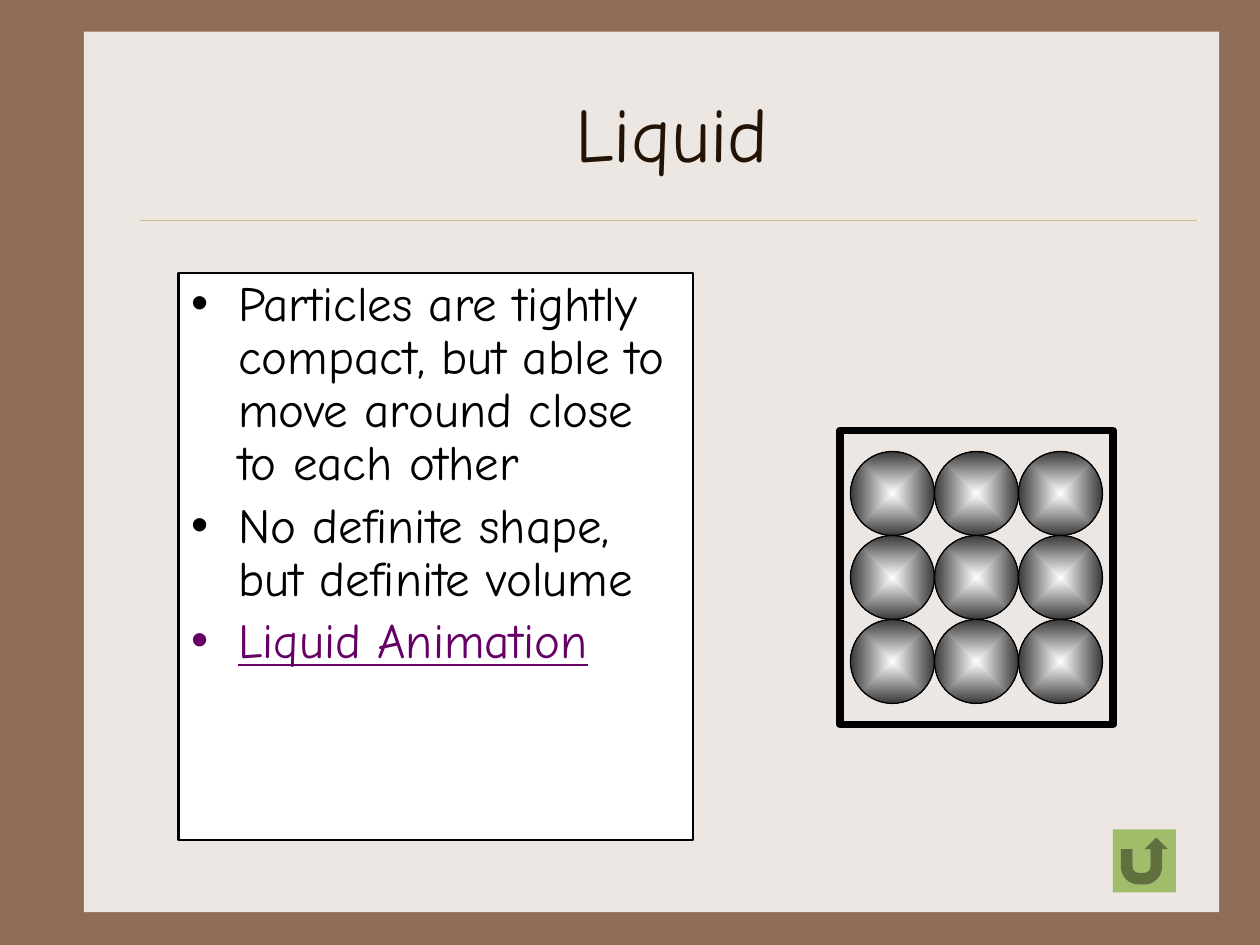
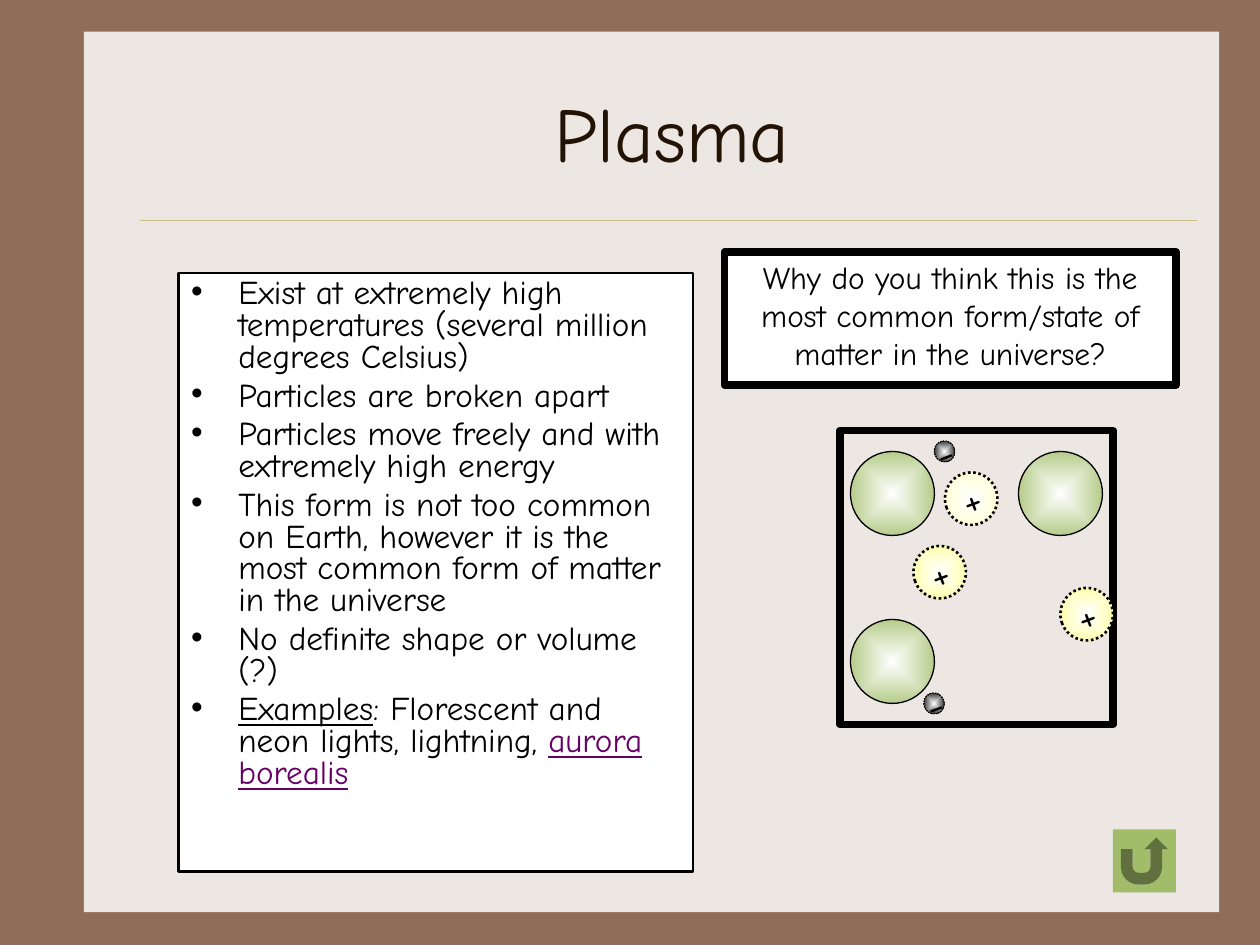
from typing import NamedTuple, Optional

from lxml.etree import SubElement
from pptx import Presentation
from pptx.dml.color import RGBColor
from pptx.enum.dml import MSO_LINE
from pptx.enum.shapes import MSO_CONNECTOR, MSO_SHAPE
from pptx.enum.text import MSO_ANCHOR, MSO_AUTO_SIZE as AutoSize, PP_ALIGN
from pptx.oxml.ns import qn
from pptx.util import Pt

FONT = "Comic Neue"
COLORS = {
    "backdrop": "906D58", "panel": "EDE7E3", "rule": "CBBD83", "title": "221304",
    "text": "000000", "link": "660066", "white": "FFFFFF", "black": "000000",
    "green": "A1BD69", "yellow": "FFFF99", "cream": "FFFFCC",
}
SPHERE_SIZE = 48
GRID_LEFT, GRID_TOP = 486, 258


class Box(NamedTuple):
    left: float
    top: float
    width: float
    height: float


class Span(NamedTuple):
    text: str
    color: str = "text"
    underline: bool = False


class Particle(NamedTuple):
    box: Box
    edge_color: str
    charge: str = ""
    outline: float = 0.75


class Lesson(NamedTuple):
    title: str
    points: list
    body_height: float
    size: float
    line_spacing: float
    particles: list
    question: Optional[str] = None


TITLE_BOX = Box(84, 30, 600, 90)
PANEL_BOX = Box(48, 18, 648.7, 503.3)
CONTAINER_BOX = Box(480, 246, 156, 168)
QUESTION_BOX = Box(414, 144, 258, 76)
RETURN_BOX = Box(636, 474, 36, 36)


def rgb(name: str) -> RGBColor:
    return RGBColor.from_string(COLORS[name])


def points(box: Box) -> list:
    return [Pt(length) for length in box]


def place(shape, box: Box) -> None:
    shape.left, shape.top, shape.width, shape.height = points(box)


def paint(shape, fill: Optional[str] = None, outline: float = 0) -> None:
    """Set a plain fill and a black outline; leave out either when not given."""
    if fill:
        shape.fill.solid()
        shape.fill.fore_color.rgb = rgb(fill)
    else:
        shape.fill.background()
    if outline:
        shape.line.color.rgb = rgb("black")
        shape.line.width = Pt(outline)
    else:
        shape.line.fill.background()


def add_preset(slide, kind, box: Box, fill: Optional[str] = None, outline: float = 0):
    shape = slide.shapes.add_shape(kind, *points(box))
    shape.shadow.inherit = False
    paint(shape, fill, outline)
    return shape


def write_text(frame, paragraphs: list, *, size: float, align=None, anchor=MSO_ANCHOR.TOP,
               wrap: bool = True, fit=AutoSize.NONE, line_spacing: Optional[float] = None,
               gap: float = 0) -> None:
    """Write paragraphs, each a list of spans, with one shared format."""
    frame.word_wrap, frame.auto_size, frame.vertical_anchor = wrap, fit, anchor
    for index, spans in enumerate(paragraphs):
        paragraph = frame.add_paragraph() if index else frame.paragraphs[0]
        paragraph.alignment = align
        paragraph.line_spacing = line_spacing
        paragraph.space_before = Pt(gap if index else 0)
        for span in spans:
            run = paragraph.add_run()
            run.text = span.text
            run.font.name, run.font.size = FONT, Pt(size)
            run.font.color.rgb = rgb(span.color)
            run.font.underline = span.underline or None


def glow(shape, edge_color: str) -> None:
    """Fade from a white centre to the edge colour."""
    shape.fill.gradient()
    for stop, name, position in zip(shape.fill.gradient_stops, ("white", edge_color), (0, 1)):
        stop.color.rgb = rgb(name)
        stop.position = position
    gradient = shape.element.spPr.find(qn("a:gradFill"))
    gradient.set("rotWithShape", "0")
    gradient.remove(gradient.find(qn("a:lin")))
    focus = SubElement(gradient, qn("a:path"), {"path": "shape"})
    SubElement(focus, qn("a:fillToRect"), {side: "50000" for side in "ltrb"})


def draw_particle(slide, particle: Particle) -> None:
    ball = add_preset(slide, MSO_SHAPE.OVAL, particle.box, outline=particle.outline)
    glow(ball, particle.edge_color)
    ball.rotation = 339.4
    if particle.charge:
        ball.line.dash_style = MSO_LINE.ROUND_DOT
        write_text(ball.text_frame, [[Span(particle.charge)]], size=24, wrap=False,
                   align=PP_ALIGN.CENTER, anchor=MSO_ANCHOR.MIDDLE)


def sphere(column: int, row: int, edge_color: str) -> Particle:
    return Particle(Box(GRID_LEFT + column * SPHERE_SIZE, GRID_TOP + row * SPHERE_SIZE,
                        SPHERE_SIZE, SPHERE_SIZE), edge_color)


def electron(left: float, top: float) -> Particle:
    return Particle(Box(left, top, 11.5, 12), "black", "-")


def proton(left: float, top: float, edge_color: str = "yellow") -> Particle:
    return Particle(Box(left, top, 30, 30), edge_color, "+", 1.5)


def decorate_layout(layout, slide) -> None:
    """Draw the panel and title rule, then move them behind the layout placeholders."""
    panel = add_preset(slide, MSO_SHAPE.RECTANGLE, PANEL_BOX, "panel")
    rule = slide.shapes.add_connector(MSO_CONNECTOR.STRAIGHT, Pt(80), Pt(126), Pt(684), Pt(126))
    rule.line.color.rgb = rgb("rule")
    rule.line.width = Pt(0.25)
    SubElement(rule.element.spPr, qn("a:effectLst"))
    for index, part in enumerate((panel, rule), start=2):
        layout.shapes.element.insert(index, part.element)


def build_lesson(slide, lesson: Lesson) -> None:
    # Title and bullet list
    title, body = slide.shapes.title, slide.placeholders[1]
    place(title, TITLE_BOX)
    write_text(title.text_frame, [[Span(lesson.title, "title")]], size=44,
               align=PP_ALIGN.CENTER, anchor=MSO_ANCHOR.MIDDLE)
    place(body, Box(102, 156, 294, lesson.body_height))
    paint(body, "white", 1.5)
    write_text(body.text_frame, lesson.points, size=lesson.size,
               line_spacing=lesson.line_spacing, gap=lesson.size * 0.2)

    # Container, question and particles
    add_preset(slide, MSO_SHAPE.RECTANGLE, CONTAINER_BOX, outline=4.5)
    if lesson.question:
        question = add_preset(slide, MSO_SHAPE.RECTANGLE, QUESTION_BOX, "white", 4.5)
        write_text(question.text_frame, [[Span(lesson.question)]], size=18,
                   align=PP_ALIGN.CENTER, fit=AutoSize.SHAPE_TO_FIT_TEXT)
    for particle in lesson.particles:
        draw_particle(slide, particle)

    # Return button
    add_preset(slide, MSO_SHAPE.ACTION_BUTTON_RETURN, RETURN_BOX, "green")


LESSONS = [
    Lesson(
        "Liquid",
        [[Span("Particles are tightly compact, but able to move around close to each other")],
         [Span("No definite shape, but definite volume")],
         [Span("Liquid Animation", "link", True)]],
        body_height=324, size=28, line_spacing=0.9,
        particles=[sphere(column, row, "black") for row in range(3) for column in range(3)],
    ),
    Lesson(
        "Plasma",
        [[Span("Exist at extremely high temperatures (several million degrees Celsius)")],
         [Span("Particles are broken apart")],
         [Span("Particles move freely and with extremely high energy")],
         [Span("This form is not too common on Earth, however it is the most common "
               "form of matter in the universe")],
         [Span("No definite shape or volume (?)")],
         [Span("Examples", underline=True), Span(": Florescent and neon lights, lightning, "),
          Span("aurora borealis", "link", True)]],
        body_height=342, size=19, line_spacing=0.8,
        particles=[*(sphere(column, row, "green") for column, row in ((0, 2), (2, 0), (0, 0))),
                   electron(528, 396), electron(534, 252),
                   proton(522, 312), proton(606, 336), proton(540, 270, "cream")],
        question="Why do you think this is the most common form/state of matter in the universe?",
    ),
]


def main() -> None:
    deck = Presentation()
    deck.slide_width, deck.slide_height = Pt(720), Pt(540)
    backdrop = deck.slide_master.background.fill
    backdrop.solid()
    backdrop.fore_color.rgb = rgb("backdrop")

    layout = deck.slide_layouts[1]
    slides = [deck.slides.add_slide(layout) for _ in LESSONS]
    decorate_layout(layout, slides[0])
    for slide, lesson in zip(slides, LESSONS):
        build_lesson(slide, lesson)
    deck.save("out.pptx")


if __name__ == "__main__":
    main()
